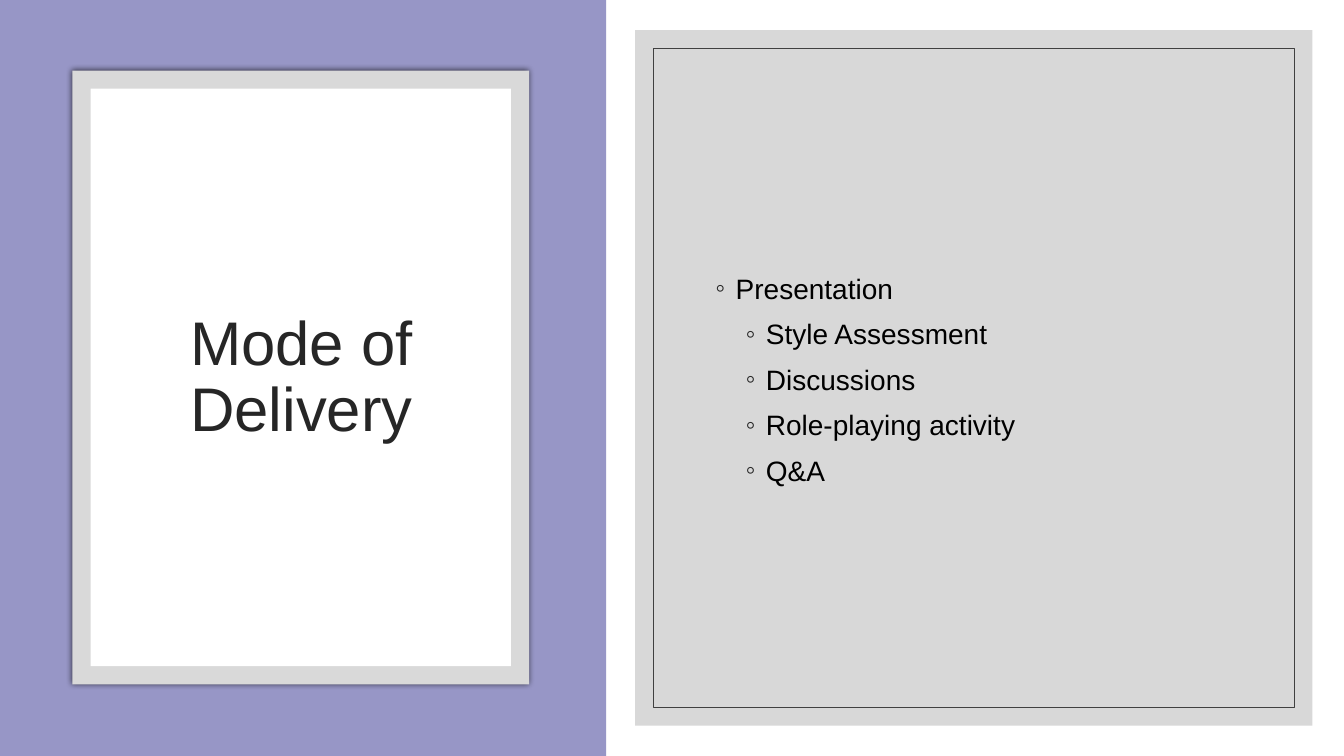
from lxml import etree
from pptx import Presentation
from pptx.dml.color import RGBColor
from pptx.enum.shapes import MSO_SHAPE
from pptx.enum.text import MSO_ANCHOR, PP_ALIGN
from pptx.oxml.ns import qn
from pptx.util import Pt

RECTANGLE = MSO_SHAPE.RECTANGLE
MIDDLE = MSO_ANCHOR.MIDDLE
CENTER = PP_ALIGN.CENTER

TITLE = "Mode of Delivery"
ITEMS = [
    (0, "Presentation"),
    (1, "Style Assessment"),
    (1, "Discussions"),
    (1, "Role-playing activity"),
    (1, "Q&A"),
]
FONT = "Arial"
BULLET = "◦"
BULLET_COLOR = "262626"
HANGING = 14.4
LEVEL_STEP = 21.6

# left, top, width, height in points
SIDEBAR = (0, 0, 433, 540)
TITLE_CARD = (51.8, 50.4, 326.2, 438.5)
TITLE_BOX = (77.8, 93.6, 275, 353.5)
PANEL = (453.6, 21.6, 483.8, 496.8)
BODY_BOX = (504, 73.4, 383.8, 392.4)
BORDER = 13


def rgb(color):
    return RGBColor.from_string(color)


def inset(box, margin):
    left, top, width, height = box
    return left + margin, top + margin, width - 2 * margin, height - 2 * margin


def add_rectangle(slide, box, fill=None, line=None):
    shape = slide.shapes.add_shape(RECTANGLE, *map(Pt, box))
    shape.shadow.inherit = False
    if fill:
        shape.fill.solid()
        shape.fill.fore_color.rgb = rgb(fill)
    else:
        shape.fill.background()
    if line:
        shape.line.color.rgb = rgb(line)
        shape.line.width = Pt(0.5)
    else:
        shape.line.fill.background()
    return shape


def add_color_alpha(color_element, percent):
    etree.SubElement(color_element, qn("a:alpha"), val=str(percent * 1000))


def add_glow_shadow(shape):
    """Give the shape a soft shadow on all sides."""
    effects = shape.element.spPr.find(qn("a:effectLst"))
    shadow = etree.SubElement(effects, qn("a:outerShdw"), blurRad=str(Pt(4)),
                              dist="0", dir="0", algn="ctr", rotWithShape="0")
    color = etree.SubElement(shadow, qn("a:srgbClr"), val="000000")
    add_color_alpha(color, 66)


def add_text_frame(slide, box):
    frame = slide.shapes.add_textbox(*map(Pt, box)).text_frame
    frame.word_wrap = True
    frame.vertical_anchor = MIDDLE
    return frame


def add_run(paragraph, text, size, color):
    run = paragraph.add_run()
    run.text = text
    run.font.name = FONT
    run.font.size = Pt(size)
    run.font.color.rgb = rgb(color)


def add_bullet(paragraph, level):
    properties = paragraph._p.get_or_add_pPr()
    properties.set("marL", str(Pt(HANGING + level * LEVEL_STEP)))
    properties.set("indent", str(Pt(-HANGING)))
    color = etree.SubElement(properties, qn("a:buClr"))
    etree.SubElement(color, qn("a:srgbClr"), val=BULLET_COLOR)
    etree.SubElement(properties, qn("a:buFont"), typeface=FONT)
    etree.SubElement(properties, qn("a:buChar"), char=BULLET)


def main():
    presentation = Presentation()
    presentation.slide_width = Pt(960)
    presentation.slide_height = Pt(540)
    slide = presentation.slides.add_slide(presentation.slide_layouts[6])
    slide.background.fill.solid()
    slide.background.fill.fore_color.rgb = rgb("FFFFFF")

    add_rectangle(slide, SIDEBAR, fill="9796C6")
    add_glow_shadow(add_rectangle(slide, TITLE_CARD, fill="D9D9D9"))
    add_rectangle(slide, inset(TITLE_CARD, BORDER), fill="FFFFFF")
    title = add_text_frame(slide, TITLE_BOX).paragraphs[0]
    title.alignment = CENTER
    title.line_spacing = 0.9
    add_run(title, TITLE, 44, "262626")

    panel = add_rectangle(slide, PANEL, fill="BFBFBF")
    add_color_alpha(panel.element.spPr.find(qn("a:solidFill"))[0], 60)
    add_rectangle(slide, inset(PANEL, BORDER), line="404040")
    body = add_text_frame(slide, BODY_BOX)
    for index, (level, text) in enumerate(ITEMS):
        paragraph = body.add_paragraph() if index else body.paragraphs[0]
        paragraph.level = level
        paragraph.line_spacing = 1.1
        if index:
            paragraph.space_before = Pt(6)
        add_bullet(paragraph, level)
        add_run(paragraph, text, 20, "000000")

    presentation.save("out.pptx")


if __name__ == "__main__":
    main()
